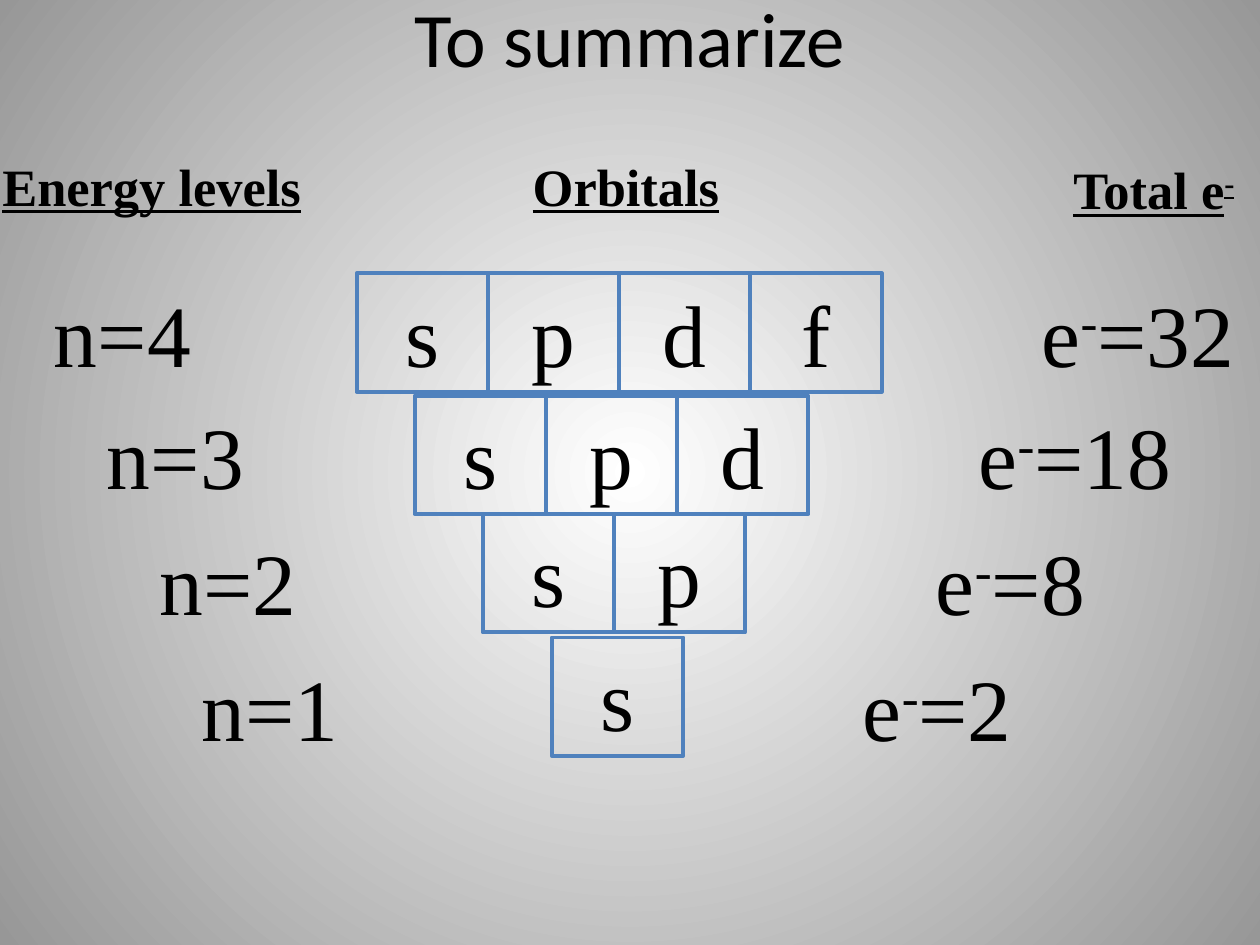
from pptx import Presentation
from pptx.dml.color import RGBColor
from pptx.enum.shapes import MSO_SHAPE
from pptx.enum.text import MSO_ANCHOR, MSO_AUTO_SIZE, PP_ALIGN
from pptx.oxml import parse_xml
from pptx.oxml.ns import nsdecls
from pptx.util import Inches, Pt

BLACK = RGBColor(0x00, 0x00, 0x00)
WHITE = RGBColor(0xFF, 0xFF, 0xFF)
GRAY = RGBColor(0x97, 0x97, 0x97)
BLUE = RGBColor(0x4F, 0x81, 0xBD)

TITLE_FORMAT = {"name": "Calibri", "size": Pt(44)}
HEADING_FORMAT = {"name": "Times New Roman", "size": Pt(30), "bold": True, "underline": True}
SYMBOL_FORMAT = {"name": "Times New Roman", "size": Pt(50)}

ORBITALS = "spdf"
CELL_WIDTH = 1.042
ROW_HEIGHT = 0.94
HEADINGS = [
    (("Energy levels",), -0.08, 1.17, 2.75),
    (("Orbitals",), 4.13, 1.17, 1.87),
    (("Total e", "-"), 8.42, 1.2, 1.6),
]
# level, label top, cell top, label left, cell left, total left, total width
LEVELS = [
    (4, 2.17, 2.17, 0.33, 2.83, 8.17, 1.83),
    (3, 3.14, 3.14, 0.75, 3.29, 7.67, 1.92),
    (2, 4.14, 4.08, 1.17, 3.83, 7.33, 1.58),
    (1, 5.14, 5.06, 1.5, 4.38, 6.75, 1.58),
]


def paint_background(slide):
    """Fill the background with a gradient that darkens away from the centre."""
    fill = slide.background.fill
    fill.gradient()
    for stop, color, position in zip(fill.gradient_stops, (WHITE, GRAY), (0, 1)):
        stop.color.rgb = color
        stop.position = position
    gradient = slide.element.xpath(".//p:bgPr/a:gradFill")[0]
    for direction in gradient.xpath("./a:lin"):
        gradient.remove(direction)
    gradient.append(parse_xml(
        f'<a:path {nsdecls("a")} path="circle">'
        '<a:fillToRect l="50000" t="50000" r="50000" b="50000"/></a:path>'))


def write(frame, parts, style, align=PP_ALIGN.LEFT):
    """Write the parts as runs, raising a lone minus sign to a superscript."""
    paragraph = frame.paragraphs[0]
    paragraph.alignment = align
    for part in parts:
        run = paragraph.add_run()
        run.text = part
        run.font.color.rgb = BLACK
        for attribute, value in style.items():
            setattr(run.font, attribute, value)
        if part == "-":
            run.font._element.set("baseline", "30000")


def add_label(slide, parts, left, top, width, height, style):
    """Add a text box that holds one line of text."""
    box = slide.shapes.add_textbox(*map(Inches, (left, top, width, height)))
    box.text_frame.word_wrap = True
    box.text_frame.auto_size = MSO_AUTO_SIZE.SHAPE_TO_FIT_TEXT
    write(box.text_frame, parts, style)


def add_orbital(slide, orbital, left, top):
    """Add one outlined orbital cell."""
    cell = slide.shapes.add_shape(
        MSO_SHAPE.RECTANGLE, *map(Inches, (left, top, CELL_WIDTH, ROW_HEIGHT)))
    cell.shadow.inherit = False
    cell.fill.background()
    cell.line.color.rgb = BLUE
    cell.line.width = Pt(2.25)
    frame = cell.text_frame
    frame.word_wrap = True
    frame.auto_size = MSO_AUTO_SIZE.SHAPE_TO_FIT_TEXT
    frame.vertical_anchor = MSO_ANCHOR.TOP
    write(frame, orbital, SYMBOL_FORMAT, PP_ALIGN.CENTER)


def add_title(slide, text):
    """Place the title across the top of the slide."""
    title = slide.shapes.title
    title.left, title.top, title.width, title.height = map(Inches, (0.5, -0.33, 9, 1.25))
    title.text_frame.vertical_anchor = MSO_ANCHOR.MIDDLE
    write(title.text_frame, (text,), TITLE_FORMAT, PP_ALIGN.CENTER)


def main():
    """Build the summary of energy levels, orbitals and electrons."""
    deck = Presentation()
    deck.slide_width, deck.slide_height = Inches(10), Inches(7.5)
    slide = deck.slides.add_slide(deck.slide_layouts[5])
    paint_background(slide)
    add_title(slide, "To summarize")
    for parts, left, top, width in HEADINGS:
        add_label(slide, parts, left, top, width, 0.61, HEADING_FORMAT)
    for level, top, cell_top, label_left, cell_left, total_left, total_width in LEVELS:
        add_label(slide, (f"n={level}",), label_left, top, 1.58, ROW_HEIGHT, SYMBOL_FORMAT)
        for column, orbital in enumerate(ORBITALS[:level]):
            add_orbital(slide, orbital, cell_left + column * CELL_WIDTH, cell_top)
        electrons = ("e", "-", f"={2 * level ** 2}")
        add_label(slide, electrons, total_left, top, total_width, ROW_HEIGHT, SYMBOL_FORMAT)
    deck.save("out.pptx")


if __name__ == "__main__":
    main()
